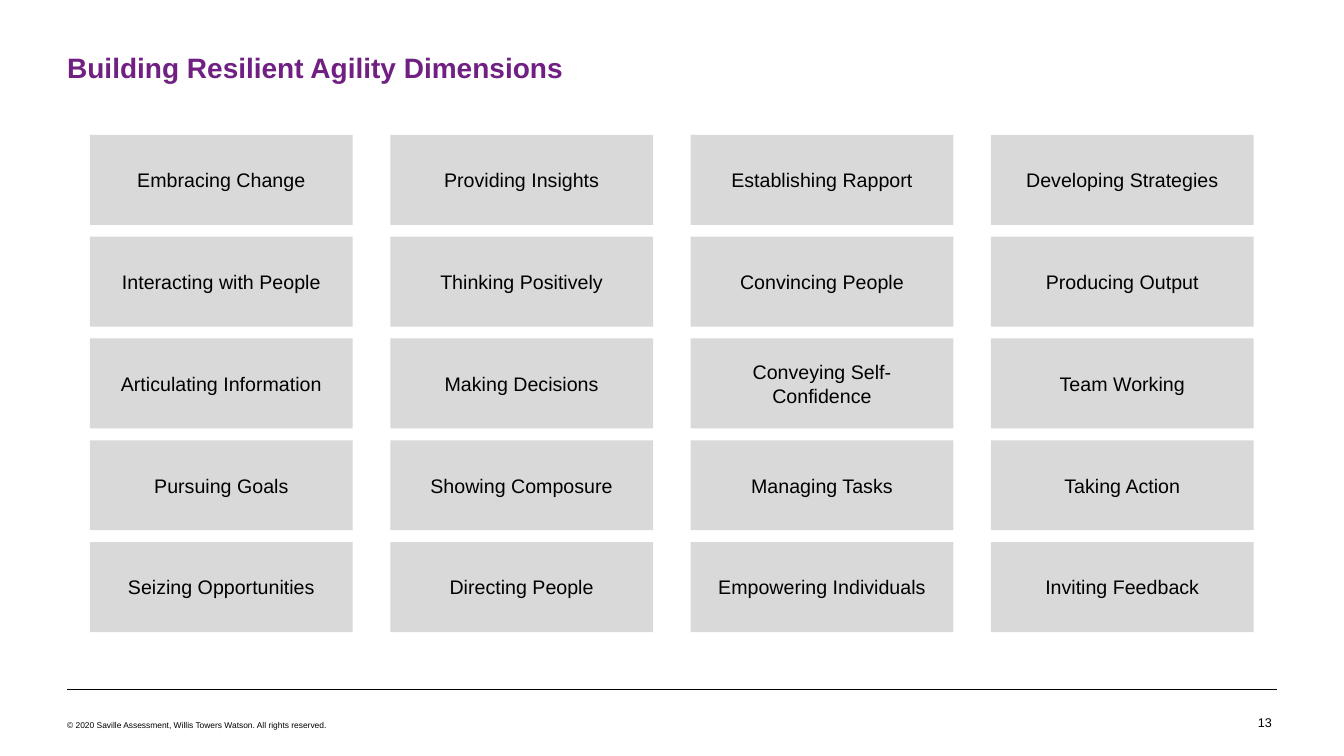
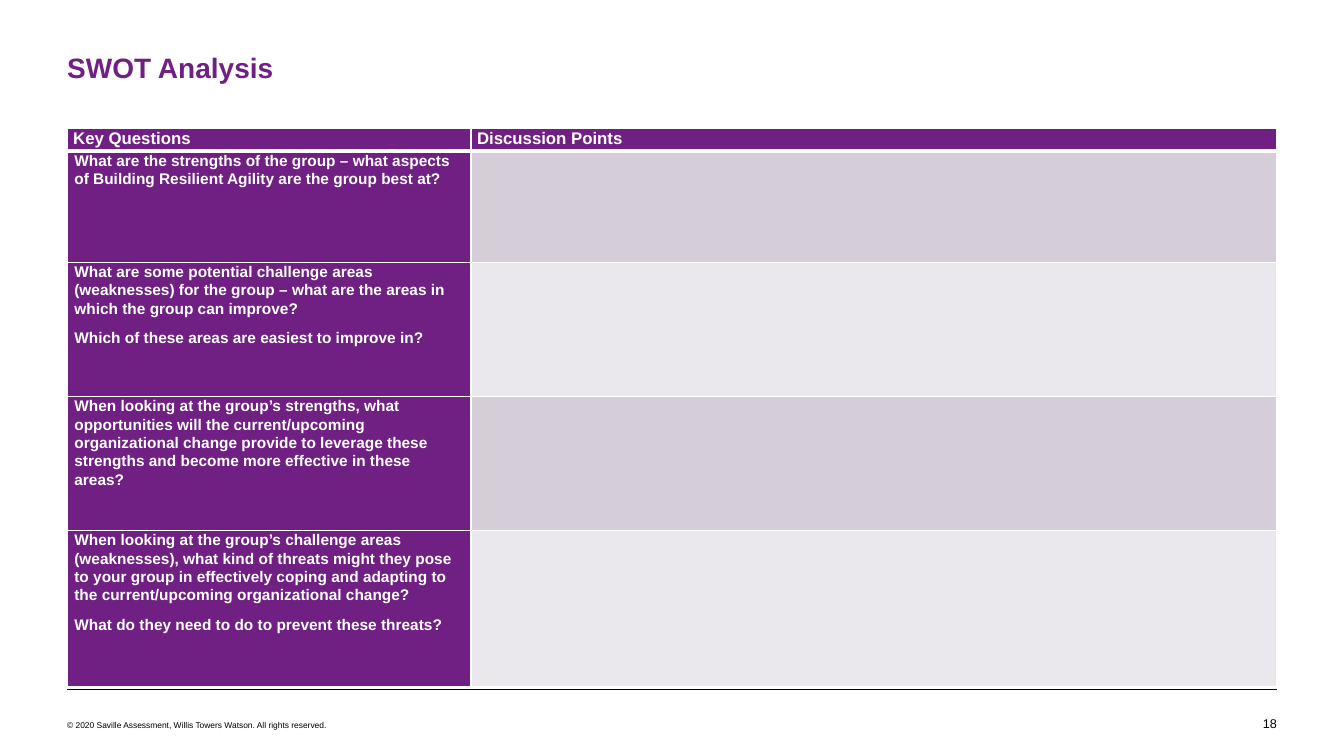
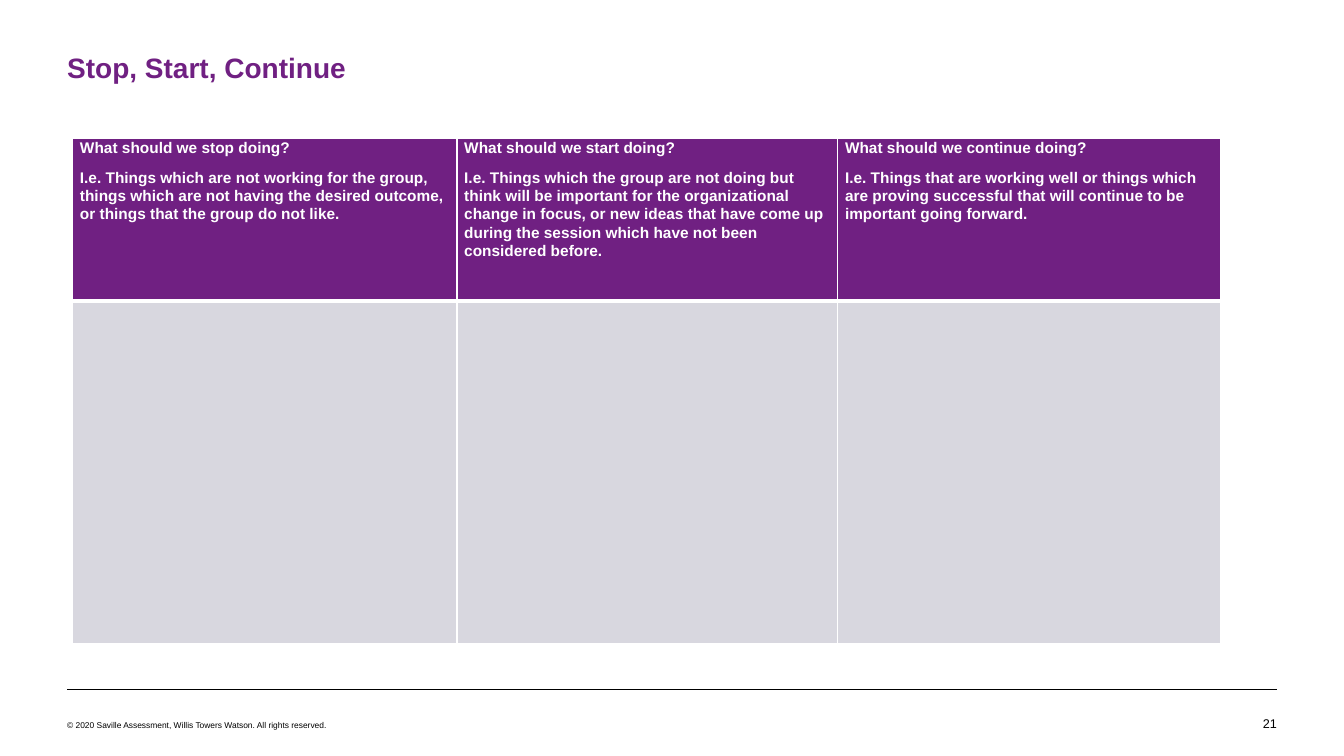
"""Build three workshop slides on resilient agility."""
from lxml.etree import SubElement
from pptx import Presentation
from pptx.dml.color import RGBColor
from pptx.enum.shapes import MSO_CONNECTOR, MSO_SHAPE
from pptx.enum.text import MSO_ANCHOR, PP_ALIGN
from pptx.oxml import parse_xml
from pptx.oxml.ns import nsdecls, qn
from pptx.util import Pt

PURPLE = RGBColor(0x70, 0x20, 0x82)
BLACK = RGBColor(0x00, 0x00, 0x00)
WHITE = RGBColor(0xFF, 0xFF, 0xFF)
CARD_GREY = RGBColor(0xD9, 0xD9, 0xD9)
BAND_DARK = RGBColor(0xD5, 0xCD, 0xD8)
BAND_LIGHT = RGBColor(0xEB, 0xE8, 0xED)
ANSWER_GREY = RGBColor(0xD8, 0xD7, 0xDF)

FONT = "Arial"
MARGIN = 48
CONTENT_WIDTH = 864
COPYRIGHT = "© 2020 Saville Assessment, Willis Towers Watson. All rights reserved."

DIMENSIONS = [
    ["Embracing Change", "Providing Insights", "Establishing Rapport", "Developing Strategies"],
    ["Interacting with People", "Thinking Positively", "Convincing People", "Producing Output"],
    ["Articulating Information", "Making Decisions", "Conveying Self-Confidence", "Team Working"],
    ["Pursuing Goals", "Showing Composure", "Managing Tasks", "Taking Action"],
    ["Seizing Opportunities", "Directing People", "Empowering Individuals", "Inviting Feedback"],
]
SWOT_HEADINGS = ["Key Questions", "Discussion Points"]
SWOT_QUESTIONS = [
    ["What are the strengths of the group – what aspects of Building Resilient Agility "
     "are the group best at?"],
    ["What are some potential challenge areas (weaknesses) for the group – what are the "
     "areas in which the group can improve?",
     "Which of these areas are easiest to improve in?"],
    ["When looking at the group’s strengths, what opportunities will the current/upcoming "
     "organizational change provide to leverage these strengths and become more effective "
     "in these areas?"],
    ["When looking at the group’s challenge areas (weaknesses), what kind of threats might "
     "they pose to your group in effectively coping and adapting to the current/upcoming "
     "organizational change?",
     "What do they need to do to prevent these threats?"],
]
ACTION_PROMPTS = [
    ["What should we stop doing?",
     "I.e. Things which are not working for the group, things which are not having the "
     "desired outcome, or things that the group do not like."],
    ["What should we start doing?",
     "I.e. Things which the group are not doing but think will be important for the "
     "organizational change in focus, or new ideas that have come up during the session "
     "which have not been considered before."],
    ["What should we continue doing?",
     "I.e. Things that are working well or things which are proving successful that will "
     "continue to be important going forward."],
]


def style_paragraph(paragraph, size, color, bold=False, align=PP_ALIGN.LEFT):
    """Set the font and alignment of a paragraph."""
    paragraph.alignment = align
    font = paragraph.font
    font.name, font.size, font.bold = FONT, Pt(size), bold
    font.color.rgb = color


def add_label(slide, text, left, top, width, height, size, color=BLACK, **style):
    """Add a one-paragraph text box without insets."""
    frame = slide.shapes.add_textbox(Pt(left), Pt(top), Pt(width), Pt(height)).text_frame
    frame.word_wrap = True
    frame.margin_left = frame.margin_right = frame.margin_top = frame.margin_bottom = 0
    frame.text = text
    style_paragraph(frame.paragraphs[0], size, color, **style)


def add_framed_slide(deck, title, number, number_left=872, footer_top=511.2):
    """Add a slide with its title, rule, copyright line and number."""
    slide = deck.slides.add_slide(deck.slide_layouts[6])
    rule = slide.shapes.add_connector(
        MSO_CONNECTOR.STRAIGHT, Pt(MARGIN), Pt(492), Pt(MARGIN + CONTENT_WIDTH), Pt(492))
    rule.line.color.rgb = BLACK
    rule.line.width = Pt(0.25)
    SubElement(rule._element.spPr, qn("a:effectLst"))
    add_label(slide, title, MARGIN, 36, CONTENT_WIDTH, 24.5, 20, PURPLE, bold=True)
    add_label(slide, str(number), number_left, footer_top, 40, 11, 9, align=PP_ALIGN.RIGHT)
    add_label(slide, COPYRIGHT, MARGIN, footer_top + 3.5, 554, 7, 6)
    return slide


def add_card(slide, text, left, top, width, height):
    """Add a grey card with centred text."""
    card = slide.shapes.add_shape(
        MSO_SHAPE.RECTANGLE, Pt(left), Pt(top), Pt(width), Pt(height))
    card.shadow.inherit = False
    card.fill.solid()
    card.fill.fore_color.rgb = CARD_GREY
    card.line.fill.background()
    frame = card.text_frame
    frame.word_wrap = True
    frame.vertical_anchor = MSO_ANCHOR.MIDDLE
    frame.margin_left = frame.margin_right = Pt(14)
    frame.text = text
    style_paragraph(frame.paragraphs[0], 14, BLACK, align=PP_ALIGN.CENTER)


def paint_cell(cell, color, top=1, bottom=1):
    """Fill a cell and give it white borders."""
    cell.fill.solid()
    cell.fill.fore_color.rgb = color
    for position, (side, width) in enumerate(zip("LRTB", (1, 1, top, bottom))):
        border = parse_xml(
            f'<a:ln{side} {nsdecls("a")} w="{Pt(width)}"><a:solidFill>'
            f'<a:srgbClr val="{WHITE}"/></a:solidFill></a:ln{side}>')
        cell._tc.get_or_add_tcPr().insert(position, border)


def write_cell(cell, texts, size=11, inset=5.15, line_spacing=1.07, space_after=8):
    """Write bold white paragraphs into a cell."""
    cell.margin_left = cell.margin_right = Pt(inset)
    cell.margin_top = cell.margin_bottom = 0
    cell.text = "\n".join(texts)
    for paragraph in cell.text_frame.paragraphs:
        paragraph.line_spacing = line_spacing
        paragraph.space_after = Pt(space_after)
        style_paragraph(paragraph, size, WHITE, bold=True)


def add_grid(slide, left, top, widths, heights, fills):
    """Add a table painted by rows of fills, with a thick rule under its first row."""
    table = slide.shapes.add_table(
        len(heights), len(widths), Pt(left), Pt(top), Pt(sum(widths)), Pt(sum(heights))).table
    table.horz_banding = False
    for column, width in zip(table.columns, widths):
        column.width = Pt(width)
    for index, (row, height, colors) in enumerate(zip(table.rows, heights, fills)):
        row.height = Pt(height)
        for cell, color in zip(row.cells, colors):
            paint_cell(cell, color, top=3 if index == 1 else 1, bottom=3 if index == 0 else 1)
    return table


def build_dimensions(deck):
    """Build the grid of agility dimensions."""
    slide = add_framed_slide(
        deck, "Building Resilient Agility Dimensions", 13, number_left=868.5, footer_top=510.5)
    for row, names in enumerate(DIMENSIONS):
        for column, name in enumerate(names):
            add_card(slide, name, 64.3 + column * 214.5, 96.4 + row * 72.7, 187.7, 64.3)


def build_swot(deck):
    """Build the SWOT question table."""
    slide = add_framed_slide(deck, "SWOT Analysis", 18)
    fills = [(PURPLE, PURPLE)] + [(PURPLE, BAND_DARK), (PURPLE, BAND_LIGHT)] * 2
    table = add_grid(slide, MARGIN, 92, [288.5, 575.5], [16, 79.5, 95.8, 95.8, 111.5], fills)
    for column, heading in enumerate(SWOT_HEADINGS):
        write_cell(table.cell(0, column), [heading], size=12, inset=4.3,
                   line_spacing=1.0, space_after=0)
    for row, questions in enumerate(SWOT_QUESTIONS, start=1):
        write_cell(table.cell(row, 0), questions)


def build_actions(deck):
    """Build the stop, start and continue table."""
    slide = add_framed_slide(deck, "Stop, Start, Continue", 21)
    table = add_grid(slide, 52, 99, [274.5, 272, 273.5], [116, 244.7],
                     [[PURPLE] * 3, [ANSWER_GREY] * 3])
    for column, prompts in enumerate(ACTION_PROMPTS):
        write_cell(table.cell(0, column), prompts)


def main():
    """Build and save the deck."""
    deck = Presentation()
    deck.slide_width, deck.slide_height = Pt(960), Pt(540)
    build_dimensions(deck)
    build_swot(deck)
    build_actions(deck)
    deck.save("out.pptx")


if __name__ == "__main__":
    main()
